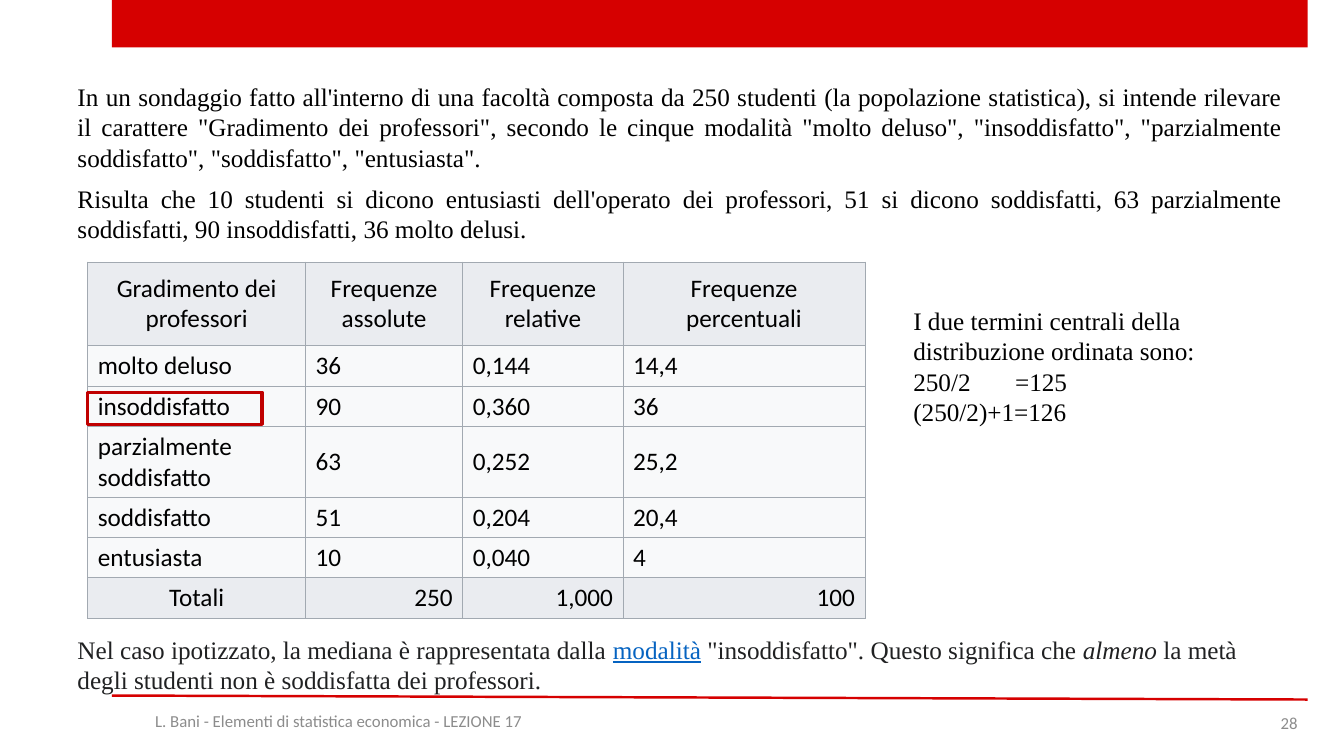
from lxml.etree import SubElement
from pptx import Presentation
from pptx.dml.color import RGBColor
from pptx.enum.shapes import MSO_CONNECTOR, MSO_SHAPE
from pptx.enum.text import MSO_ANCHOR, MSO_AUTO_SIZE, PP_ALIGN
from pptx.oxml.ns import qn
from pptx.util import Inches, Pt

COLORS = {
    "band": "D60000", "footer": "8C8C8C", "text": "000000", "conclusion": "202122",
    "link": "0563C1", "highlight": "C00000", "border": "A2A9B1",
    "heading_fill": "EAECF0", "body_fill": "F8F9FA",
}
SERIF, SANS = "Times New Roman", "Calibri"

# Each paragraph is a list of (text, style) runs.
SURVEY = [[("In un sondaggio fatto all'interno di una facoltà composta da 250 studenti "
            "(la popolazione statistica), si intende rilevare il carattere "
            "\"Gradimento dei professori\", secondo le cinque modalità \"molto deluso\", "
            "\"insoddisfatto\", \"parzialmente soddisfatto\", \"soddisfatto\", "
            "\"entusiasta\". ", {})]]
RESULTS = [[("Risulta che 10 studenti si dicono entusiasti dell'operato dei professori, "
             "51 si dicono soddisfatti, 63 parzialmente soddisfatti, 90 insoddisfatti, "
             "36 molto delusi.", {})]]
CONCLUSION = [[
    ("Nel caso ipotizzato, la mediana è rappresentata dalla ", {}),
    ("modalità", {"color": "link", "underline": True}),
    (" \"insoddisfatto\". Questo significa che ", {}),
    ("almeno", {"italic": True}),
    (" la metà degli studenti non è soddisfatta dei professori.", {}),
]]
CENTRAL_TERMS = [
    [("I due termini centrali della distribuzione ordinata sono:", {})],
    [("250/2\t=125", {})],
    [("(250/2)+1=126", {})],
]
FOOTER = [[("L. Bani - Elementi di statistica economica - LEZIONE 17", {})]]
PAGE_NUMBER = [[("28", {})]]

FREQUENCIES = [
    ("Gradimento dei professori", "Frequenze assolute", "Frequenze relative",
     "Frequenze percentuali"),
    ("molto deluso", "36", "0,144", "14,4"),
    ("insoddisfatto", "90", "0,360", "36"),
    ("parzialmente soddisfatto", "63", "0,252", "25,2"),
    ("soddisfatto", "51", "0,204", "20,4"),
    ("entusiasta", "10", "0,040", "4"),
    ("Totali", "250", "1,000", "100"),
]
COLUMN_WIDTHS = [2.16, 1.56, 1.59, 2.4]
ROW_HEIGHTS = [0.83, 0.4, 0.4, 0.7, 0.4, 0.4, 0.4]
TABLE_LEFT, TABLE_TOP = 0.87, 2.6
TEXT_LEFT, TEXT_WIDTH = 0.67, 12.15
BAND_LEFT, BAND_RIGHT = 1.11, 12.97


def rgb(name):
    return RGBColor.from_string(COLORS[name])


def add_run(paragraph, text, font_name, size, color, italic=False, underline=False):
    run = paragraph.add_run()
    run.text = text
    run.font.name = font_name
    run.font.size = Pt(size)
    run.font.color.rgb = rgb(color)
    if italic:
        run.font.italic = True
    if underline:
        run.font.underline = True


def add_text(slide, box, paragraphs, font_name=SERIF, size=18, color="text",
             align=PP_ALIGN.LEFT, anchor=MSO_ANCHOR.TOP, grow=True):
    frame = slide.shapes.add_textbox(*map(Inches, box)).text_frame
    frame.word_wrap = True
    frame.vertical_anchor = anchor
    frame.auto_size = MSO_AUTO_SIZE.SHAPE_TO_FIT_TEXT if grow else MSO_AUTO_SIZE.NONE
    for index, runs in enumerate(paragraphs):
        paragraph = frame.add_paragraph() if index else frame.paragraphs[0]
        paragraph.alignment = align
        for text, style in runs:
            add_run(paragraph, text, font_name, size, **{"color": color, **style})
    return frame


def add_tab_stop(paragraph, position):
    tab_list = SubElement(paragraph._p.get_or_add_pPr(), qn("a:tabLst"))
    SubElement(tab_list, qn("a:tab"), pos=str(Inches(position)), algn="l")


def add_borders(cell):
    properties = cell._tc.get_or_add_tcPr()
    for side in ("lnL", "lnR", "lnT", "lnB"):
        line = SubElement(properties, qn(f"a:{side}"), w=str(Pt(0.75)))
        fill = SubElement(line, qn("a:solidFill"))
        SubElement(fill, qn("a:srgbClr"), val=COLORS["border"])


def cell_alignment(row, column):
    if row == 0:
        return PP_ALIGN.CENTER
    if row == len(FREQUENCIES) - 1:
        return PP_ALIGN.RIGHT if column else PP_ALIGN.CENTER
    return PP_ALIGN.LEFT


def add_frequency_table(slide):
    table = slide.shapes.add_table(
        len(ROW_HEIGHTS), len(COLUMN_WIDTHS), Inches(TABLE_LEFT), Inches(TABLE_TOP),
        Inches(sum(COLUMN_WIDTHS)), Inches(sum(ROW_HEIGHTS))).table
    for column, width in zip(table.columns, COLUMN_WIDTHS):
        column.width = Inches(width)
    for row, height in zip(table.rows, ROW_HEIGHTS):
        row.height = Inches(height)
    for row, values in enumerate(FREQUENCIES):
        is_heading = row in (0, len(FREQUENCIES) - 1)
        for column, value in enumerate(values):
            cell = table.cell(row, column)
            add_borders(cell)
            cell.fill.solid()
            cell.fill.fore_color.rgb = rgb("heading_fill" if is_heading else "body_fill")
            cell.vertical_anchor = MSO_ANCHOR.MIDDLE
            paragraph = cell.text_frame.paragraphs[0]
            paragraph.alignment = cell_alignment(row, column)
            add_run(paragraph, value, SANS, 18, "text")


def add_rectangle(slide, left, top, width, height):
    shape = slide.shapes.add_shape(
        MSO_SHAPE.RECTANGLE, Inches(left), Inches(top), Inches(width), Inches(height))
    shape.shadow.inherit = False
    return shape


def add_frame(slide):
    """Draw the top band, the rule above the footer, and the footer texts."""
    band = add_rectangle(slide, BAND_LEFT, 0, BAND_RIGHT - BAND_LEFT, 0.47)
    band.fill.solid()
    band.fill.fore_color.rgb = rgb("band")
    band.line.fill.background()
    rule = slide.shapes.add_connector(
        MSO_CONNECTOR.STRAIGHT, Inches(BAND_LEFT), Inches(6.9),
        Inches(BAND_RIGHT), Inches(6.94))
    rule.line.color.rgb = rgb("band")
    rule.line.width = Pt(1.75)
    SubElement(rule._element.spPr, qn("a:effectLst"))
    footer_style = dict(font_name=SANS, size=12, color="footer",
                        anchor=MSO_ANCHOR.MIDDLE, grow=False)
    add_text(slide, (BAND_LEFT, 6.95, 4.5, 0.4), FOOTER,
             align=PP_ALIGN.CENTER, **footer_style)
    add_text(slide, (BAND_RIGHT - 3, 6.97, 3, 0.4), PAGE_NUMBER,
             align=PP_ALIGN.RIGHT, **footer_style)


def main():
    presentation = Presentation()
    presentation.slide_width = Inches(13.33)
    presentation.slide_height = Inches(7.5)
    slide = presentation.slides.add_slide(presentation.slide_layouts[6])

    add_frame(slide)
    add_text(slide, (TEXT_LEFT, 0.76, TEXT_WIDTH, 1.01), SURVEY, align=PP_ALIGN.JUSTIFY)
    add_text(slide, (TEXT_LEFT, 1.77, TEXT_WIDTH, 0.71), RESULTS, align=PP_ALIGN.JUSTIFY)
    add_frequency_table(slide)
    add_text(slide, (TEXT_LEFT, 6.24, TEXT_WIDTH, 0.71), CONCLUSION, color="conclusion")
    central_terms = add_text(slide, (8.96, 2.98, 4.08, 1.31), CENTRAL_TERMS)
    add_tab_stop(central_terms.paragraphs[1], 1.01)

    median_box = add_rectangle(slide, TABLE_LEFT, 3.89, 1.73, 0.32)
    median_box.fill.background()
    median_box.line.color.rgb = rgb("highlight")
    median_box.line.width = Pt(2.25)

    presentation.save("out.pptx")


if __name__ == "__main__":
    main()
